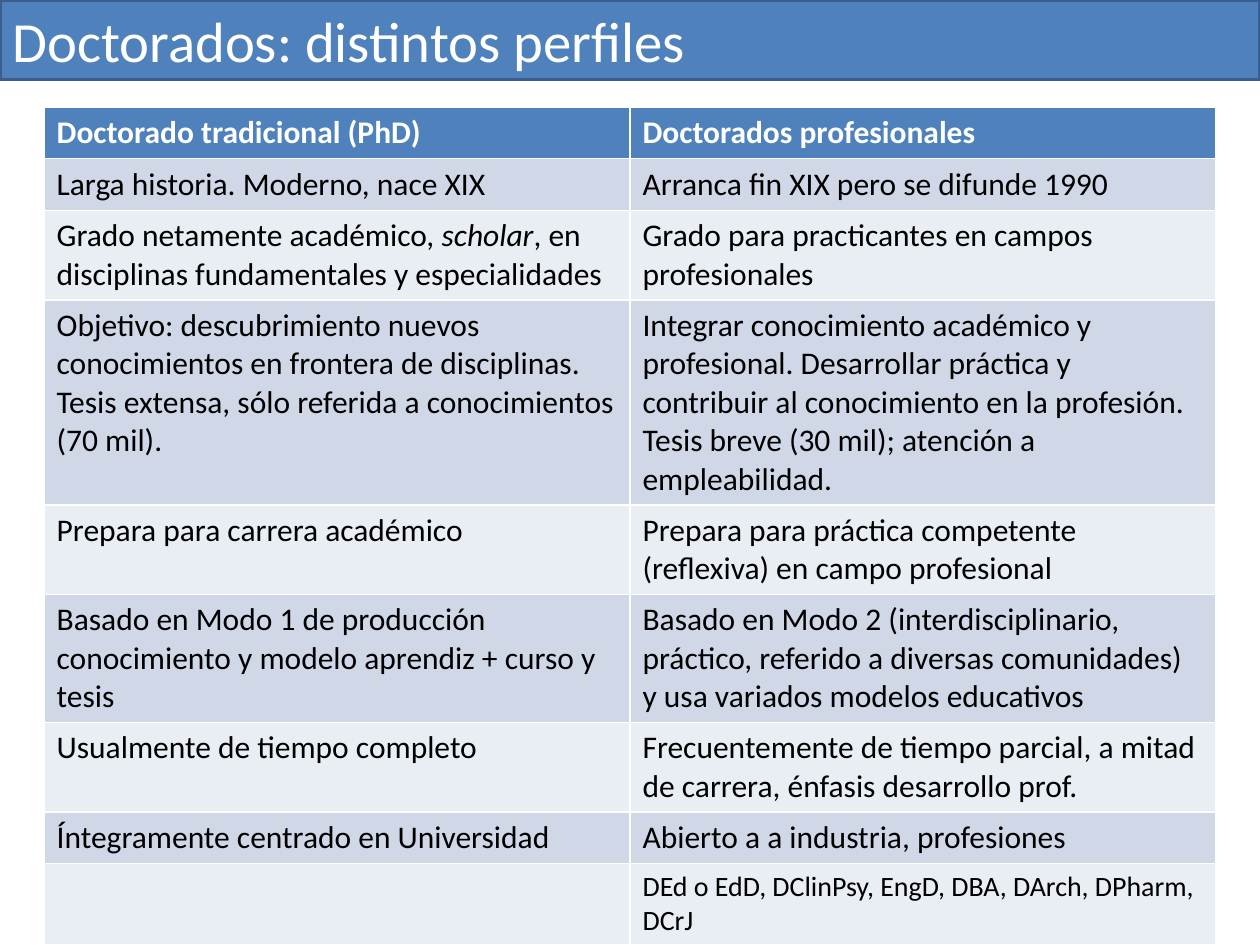
from dataclasses import dataclass

from pptx import Presentation
from pptx.dml.color import RGBColor
from pptx.enum.text import MSO_ANCHOR, PP_ALIGN
from pptx.util import Inches, Pt


@dataclass(frozen=True)
class Theme:
    font: str = "Calibri"
    accent: str = "4F81BD"
    outline: str = "3A5F8C"
    bands: tuple = ("D0D8E8", "E9EDF4")
    light: str = "FFFFFF"
    dark: str = "000000"
    title_size: float = 32.4
    body_size: float = 18
    small_size: float = 16


class SlideBuilder:
    """Draws styled elements on the current slide."""

    def __init__(self, presentation, theme):
        self.theme = theme
        self.slide = presentation.slides.add_slide(presentation.slide_layouts[5])

    def fill(self, target, color):
        target.fill.solid()
        target.fill.fore_color.rgb = RGBColor.from_string(color)

    def style(self, paragraph, size, color, bold=False):
        paragraph.alignment = PP_ALIGN.LEFT
        font = paragraph.font
        font.name, font.size, font.bold = self.theme.font, Pt(size), bold
        font.color.rgb = RGBColor.from_string(color)

    def title(self, text, left, top, width, height):
        shape = self.slide.shapes.title
        shape.left, shape.top = Inches(left), Inches(top)
        shape.width, shape.height = Inches(width), Inches(height)
        self.fill(shape, self.theme.accent)
        shape.line.color.rgb = RGBColor.from_string(self.theme.outline)
        shape.line.width = Pt(2)
        frame = shape.text_frame
        frame.text = text
        frame.vertical_anchor = MSO_ANCHOR.MIDDLE
        self.style(frame.paragraphs[0], self.theme.title_size, self.theme.light)

    def cell(self, cell, content, fill, size, color, bold):
        self.fill(cell, fill)
        paragraph = cell.text_frame.paragraphs[0]
        self.style(paragraph, size, color, bold)
        for index, text in enumerate(content.split("*")):
            if text:
                run = paragraph.add_run()
                run.text = text
                if index % 2:
                    run.font.italic = True

    def table(self, rows, left, top, width, row_height):
        theme = self.theme
        table = self.slide.shapes.add_table(
            len(rows), len(rows[0]), Inches(left), Inches(top),
            Inches(width), Inches(row_height * len(rows))).table
        for row_index, row in enumerate(rows):
            header = row_index == 0
            last = row_index == len(rows) - 1
            fill = theme.accent if header else theme.bands[(row_index - 1) % 2]
            color = theme.light if header else theme.dark
            size = theme.small_size if last else theme.body_size
            for column_index, content in enumerate(row):
                self.cell(table.cell(row_index, column_index), content,
                          fill, size, color, header)


PROFILES = [
    ("Doctorado tradicional (PhD)", "Doctorados profesionales"),
    ("Larga historia. Moderno, nace XIX", "Arranca fin XIX pero se difunde 1990"),
    ("Grado netamente académico, *scholar*, en disciplinas fundamentales y especialidades",
     "Grado para practicantes en campos profesionales"),
    ("Objetivo: descubrimiento nuevos conocimientos en frontera de disciplinas. "
     "Tesis extensa, sólo referida a conocimientos (70 mil).",
     "Integrar conocimiento académico y profesional. Desarrollar práctica y contribuir "
     "al conocimiento en la profesión. Tesis breve (30 mil); atención a empleabilidad."),
    ("Prepara para carrera académico",
     "Prepara para práctica competente (reflexiva) en campo profesional"),
    ("Basado en Modo 1 de producción conocimiento y modelo aprendiz + curso y tesis",
     "Basado en Modo 2 (interdisciplinario, práctico, referido a diversas comunidades) "
     "y usa variados modelos educativos"),
    ("Usualmente de tiempo completo",
     "Frecuentemente de tiempo parcial, a mitad de carrera, énfasis desarrollo prof."),
    ("Íntegramente centrado en Universidad", "Abierto a a industria, profesiones"),
    ("", "DEd o EdD, DClinPsy, EngD, DBA, DArch, DPharm, DCrJ"),
]


def main():
    presentation = Presentation()
    presentation.slide_width, presentation.slide_height = Inches(10), Inches(7.5)
    builder = SlideBuilder(presentation, Theme())
    builder.title("Doctorados: distintos perfiles", 0, 0, 10, 0.63)
    builder.table(PROFILES, 0.35, 0.85, 9.3, 0.41)
    presentation.save("out.pptx")


main()
